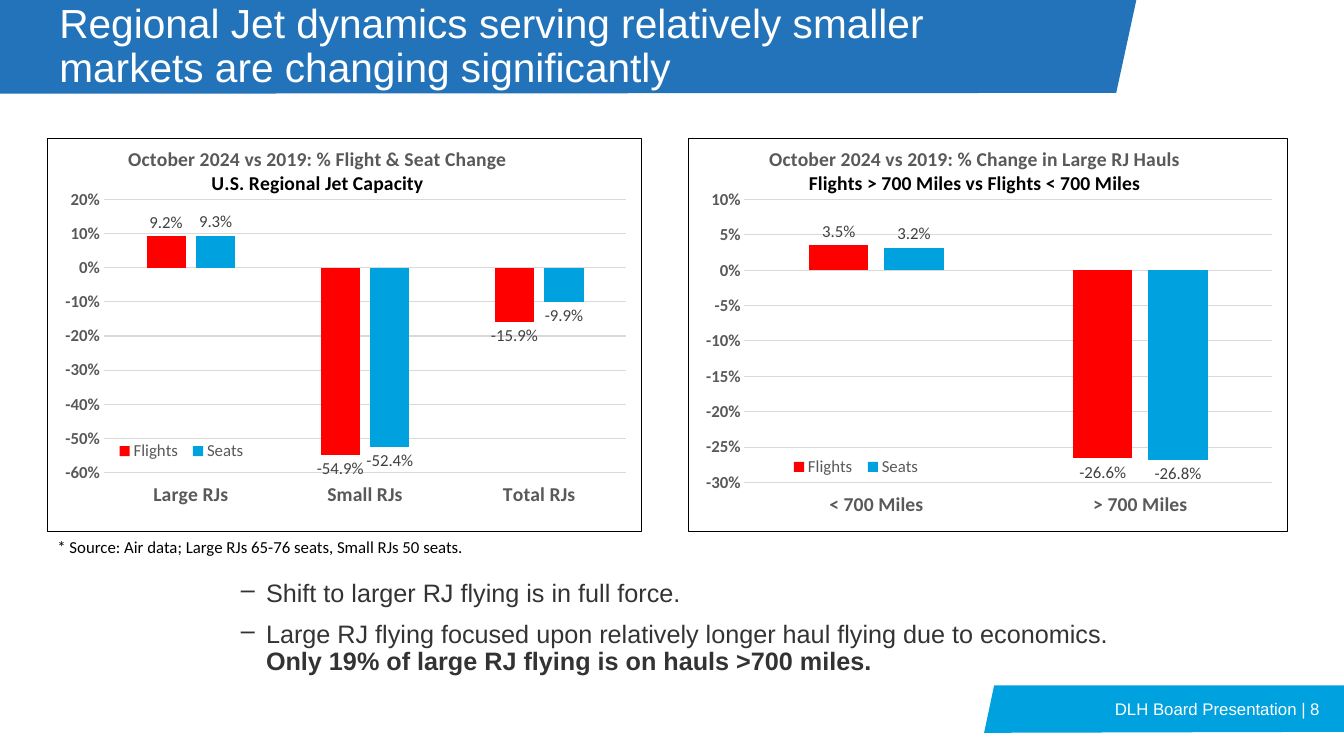
import dataclasses

import lxml.etree
import pptx
import pptx.chart.data
import pptx.dml.color
import pptx.enum.chart
import pptx.enum.text
import pptx.oxml
import pptx.oxml.ns
import pptx.util

# Grid: 100 columns by 100 rows, so places read as percentages of the slide
SLIDE_W, SLIDE_H = pptx.util.Inches(13.33), pptx.util.Inches(7.5)
COL, ROW = SLIDE_W / 100, SLIDE_H / 100


@dataclasses.dataclass(frozen=True)
class Theme:
    heading: str = "Arial"
    data: str = "Calibri"
    banner: str = "2273BA"
    flights: str = "FF0000"
    seats: str = "00A1DF"
    white: str = "FFFFFF"
    black: str = "000000"
    body: str = "333333"
    labels: str = "404040"
    axis: str = "595959"
    grid: str = "D9D9D9"
    title_size: int = 29
    body_size: int = 18
    chart_title_size: int = 14
    small_size: int = 12


THEME = Theme()


def rgb(code):
    return pptx.dml.color.RGBColor.from_string(code)


def place(left, top, width, height):
    return [round(v) for v in (left * COL, top * ROW, width * COL, height * ROW)]


def style(font, size, color, name, bold=False):
    font.size, font.name, font.bold = pptx.util.Pt(size), name, bold
    font.color.rgb = rgb(color)


def add_band(slide, corners, color):
    points = [(round(x * COL), round(y * ROW)) for x, y in corners]
    builder = slide.shapes.build_freeform(*points[0])
    builder.add_line_segments(points[1:], close=True)
    band = builder.convert_to_shape()
    band.shadow.inherit = False
    band.fill.solid()
    band.fill.fore_color.rgb = rgb(color)
    band.line.fill.background()


def add_text(slide, box, text, size, color, name, middle=False, align=None):
    frame = slide.shapes.add_textbox(*place(*box)).text_frame
    frame.word_wrap = True
    if middle:
        frame.vertical_anchor = pptx.enum.text.MSO_ANCHOR.MIDDLE
    frame.text = text
    paragraph = frame.paragraphs[0]
    paragraph.alignment = align
    style(paragraph.runs[0].font, size, color, name)
    return frame


def add_bullets(slide, box, points):
    frame = slide.shapes.add_textbox(*place(*box)).text_frame
    frame.word_wrap = True
    for i, (plain, strong) in enumerate(points):
        point = frame.paragraphs[0] if i == 0 else frame.add_paragraph()
        point.text = plain
        if strong:
            point.add_run().text = strong
        for run in point.runs:
            style(run.font, THEME.body_size, THEME.body, THEME.heading, run.text == strong)
        point.line_spacing = 0.9
        point.space_before = pptx.util.Pt(10)
        properties = point._p.get_or_add_pPr()
        indent = pptx.util.Inches(0.25)
        properties.set("marL", str(indent))
        properties.set("indent", str(-indent))
        lxml.etree.SubElement(properties, pptx.oxml.ns.qn("a:buChar")).set("char", "–")


def manual_layout(x, y, width=None, height=None, inner=False):
    """Chart part layout, in shares of the chart's size."""
    settings = [("layoutTarget", "inner")] if inner else []
    settings += [("xMode", "edge"), ("yMode", "edge"), ("x", x), ("y", y)]
    if width:
        settings += [("w", width), ("h", height)]
    inside = "".join(f'<c:{tag} val="{value}"/>' for tag, value in settings)
    return pptx.oxml.parse_xml(
        f'<c:layout {pptx.oxml.ns.nsdecls("c")}>'
        f"<c:manualLayout>{inside}</c:manualLayout></c:layout>")


def set_layout(part, after, layout):
    for old in part.findall(pptx.oxml.ns.qn("c:layout")):
        part.remove(old)
    if after:
        part.find(pptx.oxml.ns.qn(after)).addnext(layout)
    else:
        part.insert(0, layout)


def format_axes(chart, low, high, step):
    tick = pptx.enum.chart.XL_TICK_MARK.NONE
    for axis, size in ((chart.category_axis, THEME.chart_title_size),
                       (chart.value_axis, THEME.small_size)):
        axis.major_tick_mark = axis.minor_tick_mark = tick
        style(axis.tick_labels.font, size, THEME.axis, THEME.data, True)
    categories, values = chart.category_axis, chart.value_axis
    categories.tick_label_position = pptx.enum.chart.XL_TICK_LABEL_POSITION.LOW
    values.minimum_scale, values.maximum_scale, values.major_unit = low, high, step
    values.tick_labels.number_format = "0%"
    values.tick_labels.number_format_is_linked = False
    values.format.line.fill.background()
    for line in (categories.format.line, values.major_gridlines.format.line):
        line.color.rgb = rgb(THEME.grid)
        line.width = pptx.util.Pt(0.75)


def add_change_chart(slide, box, titles, categories, changes, scale, plot_height, legend_at):
    data = pptx.chart.data.CategoryChartData(number_format="0.0%")
    data.categories = categories
    for name, values in changes.items():
        data.add_series(name, values)
    kind = pptx.enum.chart.XL_CHART_TYPE.COLUMN_CLUSTERED
    chart = slide.shapes.add_chart(kind, *place(*box), data).chart
    style(chart.font, 10, THEME.black, THEME.data)

    # Heading
    chart.has_title = True
    heading = chart.chart_title.text_frame
    heading.text = "\n".join(titles)
    for line, color in zip(heading.paragraphs, (THEME.axis, THEME.black)):
        style(line.runs[0].font, THEME.chart_title_size, color, THEME.data, True)
    set_layout(chart.chart_title._element, "c:tx", manual_layout(0.13, 0.01))

    # Columns and their labels
    plot = chart.plots[0]
    plot.gap_width, plot.overlap, plot.vary_by_categories = 219, -27, False
    for series, color in zip(plot.series, (THEME.flights, THEME.seats)):
        series.format.fill.solid()
        series.format.fill.fore_color.rgb = rgb(color)
        series.invert_if_negative = False
        labels = series.data_labels
        labels.show_value = True
        labels.number_format, labels.number_format_is_linked = "0.0%", False
        labels.position = pptx.enum.chart.XL_LABEL_POSITION.OUTSIDE_END
        style(labels.font, THEME.small_size, THEME.labels, THEME.data)
    format_axes(chart, *scale)
    plot_area = chart._chartSpace.chart.plotArea
    set_layout(plot_area, None, manual_layout(0.094, 0.155, 0.88, plot_height, inner=True))

    # Legend inside the plot
    chart.has_legend = True
    chart.legend.position = pptx.enum.chart.XL_LEGEND_POSITION.BOTTOM
    chart.legend.include_in_layout = False
    style(chart.legend.font, THEME.small_size, THEME.axis, THEME.data)
    set_layout(chart.legend._element, "c:legendPos", manual_layout(*legend_at, 0.24, 0.07))

    # Frame
    chart._chartSpace.chart.addnext(pptx.oxml.parse_xml(
        f'<c:spPr {pptx.oxml.ns.nsdecls("c", "a")}><a:noFill/><a:ln w="9525"><a:solidFill>'
        f'<a:srgbClr val="{THEME.black}"/></a:solidFill></a:ln></c:spPr>'))


def main():
    deck = pptx.Presentation()
    deck.slide_width, deck.slide_height = SLIDE_W, SLIDE_H
    slide = deck.slides.add_slide(deck.slide_layouts[6])

    # Header and footer
    add_band(slide, [(0, 0), (84.55, 0), (83.05, 12.3), (0, 12.4)], THEME.banner)
    add_band(slide, [(73.97, 90.67), (100, 90.67), (100, 96.8), (73.22, 96.93)], THEME.seats)
    add_text(slide, (3.68, 0.13, 74.12, 12.27),
             "Regional Jet dynamics serving relatively smaller markets are changing significantly",
             THEME.title_size, THEME.white, THEME.heading,
             middle=True).paragraphs[0].line_spacing = 0.9
    add_text(slide, (76.59, 90.67, 22.36, 6.27), "DLH Board Presentation | 8",
             THEME.small_size, THEME.white, THEME.heading,
             middle=True, align=pptx.enum.text.PP_ALIGN.RIGHT)

    # Charts
    add_change_chart(
        slide, (3.53, 18.27, 44.26, 52.13),
        ("October 2024 vs 2019: % Flight & Seat Change", "U.S. Regional Jet Capacity"),
        ("Large RJs", "Small RJs", "Total RJs"),
        {"Flights": (0.092, -0.549, -0.159), "Seats": (0.093, -0.524, -0.099)},
        (-0.6, 0.2, 0.1), 0.695, (0.105, 0.76))
    add_change_chart(
        slide, (51.16, 18.27, 44.71, 52.13),
        ("October 2024 vs 2019: % Change in Large RJ Hauls",
         "Flights > 700 Miles vs Flights < 700 Miles"),
        ("< 700 Miles", "> 700 Miles"),
        {"Flights": (0.035, -0.266), "Seats": (0.032, -0.268)},
        (-0.3, 0.1, 0.05), 0.72, (0.16, 0.8))

    # Source and takeaways
    add_text(slide, (3.53, 70.4, 42.09, 4.53),
             "* Source: Air data; Large RJs 65-76 seats, Small RJs 50 seats.",
             THEME.small_size, THEME.black, THEME.data)
    add_bullets(slide, (17.18, 76.13, 68.04, 16.8), [
        ("Shift to larger RJ flying is in full force.", ""),
        ("Large RJ flying focused upon relatively longer haul flying due to economics. ",
         "Only 19% of large RJ flying is on hauls >700 miles.")])
    deck.save("out.pptx")


if __name__ == "__main__":
    main()
